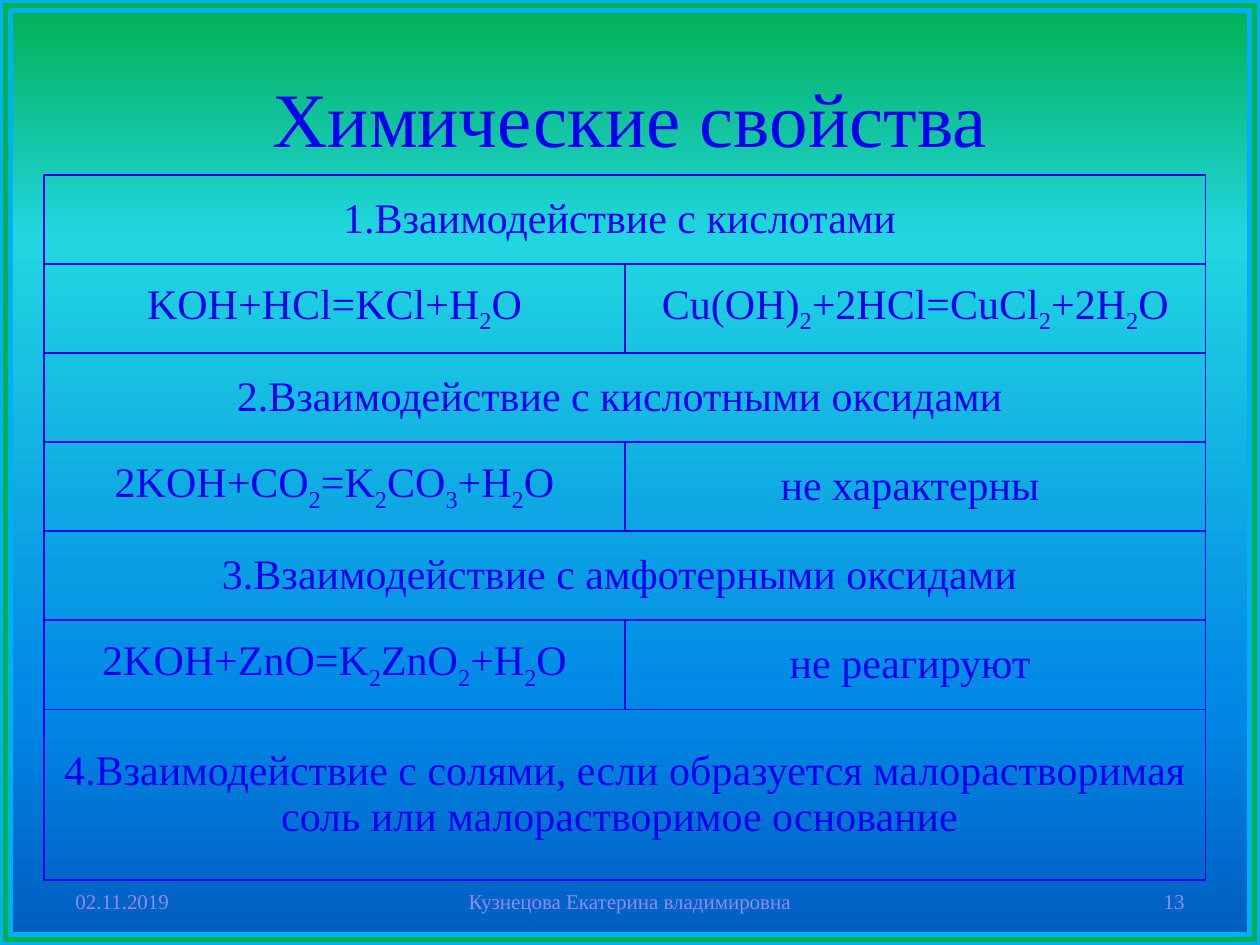
from collections import namedtuple
from dataclasses import dataclass

from lxml import etree
from pptx import Presentation
from pptx.dml.color import RGBColor
from pptx.enum.shapes import MSO_SHAPE
from pptx.enum.text import MSO_ANCHOR, PP_ALIGN
from pptx.oxml.ns import qn
from pptx.util import Pt

FRAME = MSO_SHAPE.FRAME
MIDDLE = MSO_ANCHOR.MIDDLE
LEFT, CENTER, RIGHT = PP_ALIGN.LEFT, PP_ALIGN.CENTER, PP_ALIGN.RIGHT

Box = namedtuple("Box", "left top width height")


@dataclass(frozen=True)
class Theme:
    font: str = "Times New Roman"
    ink: str = "0000EE"
    muted: str = "8C8CF2"
    frame: str = "00B050"
    frame_line: str = "00B0F0"
    gradient: tuple = ((0, "00B050"), (25, "21D6E0"), (75, "0087E6"), (100, "005CBF"))
    title_size: int = 44
    table_size: int = 24
    footer_size: int = 12


THEME = Theme()

# An underscore marks the next character as a subscript.
# A row with one entry spans both columns.
REACTIONS = [
    ["1.Взаимодействие с кислотами "],
    ["KOH+HCl=KCl+H_2O", "Cu(OH)_2+2HCl=CuCl_2+2H_2O"],
    ["2.Взаимодействие с кислотными оксидами "],
    ["2KOH+CO_2=K_2CO_3+H_2O", "не характерны "],
    ["3.Взаимодействие с амфотерными оксидами "],
    ["2KOH+ZnO=K_2ZnO_2+H_2O", "не реагируют "],
    ["4.Взаимодействие с солями, если образуется малорастворимая "
     "соль или малорастворимое основание "],
]
ROW_HEIGHT = 50.9


def points(box):
    return [Pt(length) for length in box]


def style_para(para, size, color, align):
    para.alignment = align
    para.font.name = THEME.font
    para.font.size = Pt(size)
    para.font.color.rgb = RGBColor.from_string(color)


def add_color(parent, color):
    etree.SubElement(parent, qn("a:srgbClr"), val=color)


def paint_background(page):
    """Fill the page with the top-to-bottom gradient of the theme."""
    fill = page.background.fill
    fill.gradient()
    fill.gradient_angle = 270
    stops = fill.gradient_stops
    stop_list = page.element.find(".//" + qn("a:gsLst"))
    for stop in list(stop_list):
        stop_list.remove(stop)
    for percent, color in THEME.gradient:
        stop = etree.SubElement(stop_list, qn("a:gs"), pos=str(percent * 1000))
        add_color(stop, color)


def add_frame(page, box):
    frame = page.shapes.add_shape(FRAME, *points(box))
    frame.adjustments[0] = 0.011
    frame.shadow.inherit = False
    frame.fill.solid()
    frame.fill.fore_color.rgb = RGBColor.from_string(THEME.frame)
    frame.line.color.rgb = RGBColor.from_string(THEME.frame_line)
    frame.line.width = Pt(3.15)


def add_text(page, box, text, size, color, align):
    text_frame = page.shapes.add_textbox(*points(box)).text_frame
    text_frame.word_wrap = True
    text_frame.vertical_anchor = MIDDLE
    para = text_frame.paragraphs[0]
    para.text = text
    style_para(para, size, color, align)


def write_formula(para, text):
    plain, *parts = text.split("_")
    para.add_run().text = plain
    for part in parts:
        subscript = para.add_run()
        subscript.text = part[0]
        subscript.font._element.set("baseline", "-25000")
        if part[1:]:
            para.add_run().text = part[1:]


def style_cell(cell):
    """Clear the fill, tighten the margins and draw all four borders."""
    cell.fill.background()
    cell.vertical_anchor = MIDDLE
    cell.margin_left = cell.margin_right = Pt(0.72)
    cell.margin_top = cell.margin_bottom = Pt(0.72)
    properties = cell._tc.get_or_add_tcPr()
    for index, side in enumerate(("a:lnL", "a:lnR", "a:lnT", "a:lnB")):
        border = etree.Element(qn(side), w=str(Pt(1)))
        add_color(etree.SubElement(border, qn("a:solidFill")), THEME.ink)
        properties.insert(index, border)


def add_reactions(page, box):
    table = page.shapes.add_table(len(REACTIONS), 2, *points(box)).table
    table.first_row = table.horz_banding = False
    for column in table.columns:
        column.width = Pt(box.width / 2)
    *upper_rows, last_row = table.rows
    for row in upper_rows:
        row.height = Pt(ROW_HEIGHT)
    last_row.height = Pt(box.height - ROW_HEIGHT * len(upper_rows))

    for row_index, entries in enumerate(REACTIONS):
        cells = [table.cell(row_index, column) for column in range(2)]
        for cell in cells:
            style_cell(cell)
        if len(entries) == 1:
            cells[0].merge(cells[1])
        for cell, entry in zip(cells, entries):
            para = cell.text_frame.paragraphs[0]
            style_para(para, THEME.table_size, THEME.ink, CENTER)
            write_formula(para, entry)


def add_footer(page, box):
    side_width, middle_width = 168, 228
    middle_left = box.left + (box.width - middle_width) / 2
    right_left = box.left + box.width - side_width
    for left, width, text, align in (
        (box.left, side_width, "02.11.2019", LEFT),
        (middle_left, middle_width, "Кузнецова Екатерина владимировна", CENTER),
        (right_left, side_width, "13", RIGHT),
    ):
        part = Box(left, box.top, width, box.height)
        add_text(page, part, text, THEME.footer_size, THEME.muted, align)


def main():
    deck = Presentation()
    deck.slide_width, deck.slide_height = Pt(720), Pt(540)
    page = deck.slides.add_slide(deck.slide_layouts[6])
    paint_background(page)
    add_frame(page, Box(0, 0, 720, 540))
    add_text(page, Box(36, 21.6, 648, 90), "Химические свойства",
             THEME.title_size, THEME.ink, CENTER)
    add_reactions(page, Box(25.2, 100, 663.8, 402.9))
    add_footer(page, Box(36, 500.4, 648, 28.8))
    deck.save("out.pptx")


if __name__ == "__main__":
    main()
